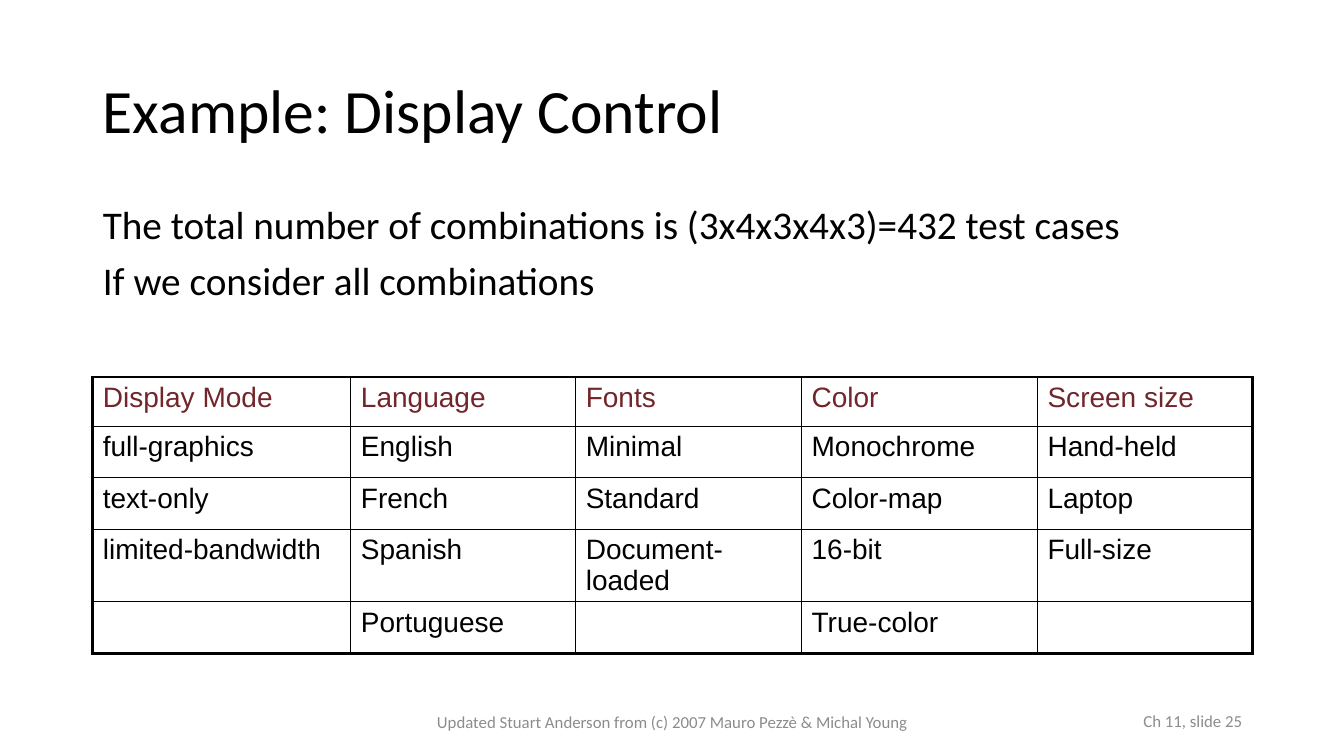
from lxml.etree import SubElement
from pptx import Presentation
from pptx.dml.color import RGBColor
from pptx.enum.text import MSO_ANCHOR as Anchor, MSO_AUTO_SIZE as AutoSize, PP_ALIGN as Align
from pptx.oxml.ns import qn
from pptx.util import Inches, Pt

COLORS = {"ink": "000000", "heading": "72252B", "footer": "8C8C8C", "paper": "FFFFFF"}
COLUMN_WIDTHS = [2.56, 2.23, 2.24, 2.34, 2.13]
ROW_HEIGHTS = [0.49, 0.51, 0.51, 0.55, 0.51]
DISPLAY_OPTIONS = [
    ["Display Mode", "Language", "Fonts", "Color", "Screen size"],
    ["full-graphics", "English", "Minimal", "Monochrome", "Hand-held"],
    ["text-only", "French", "Standard", "Color-map", "Laptop"],
    ["limited-bandwidth", "Spanish", "Document-loaded", "16-bit", "Full-size"],
    ["", "Portuguese", "", "True-color", ""],
]


def place(shape, left, top, width, height):
    shape.left, shape.top = Inches(left), Inches(top)
    shape.width, shape.height = Inches(width), Inches(height)


def style(paragraph, size, color, font="Calibri", align=Align.LEFT):
    paragraph.alignment = align
    paragraph.font.size = Pt(size)
    paragraph.font.name = font
    paragraph.font.color.rgb = RGBColor.from_string(COLORS[color])


def fill_title(title, text):
    place(title, 0.92, 0.4, 11.5, 1.45)
    frame = title.text_frame
    frame.text = text
    frame.auto_size = AutoSize.NONE
    frame.vertical_anchor = Anchor.MIDDLE
    style(frame.paragraphs[0], 44, "ink")
    frame.paragraphs[0].line_spacing = 0.9


def fill_body(body, lines):
    place(body, 0.92, 1.99, 10.33, 1.33)
    frame = body.text_frame
    frame.text = "\n".join(lines)
    frame.auto_size = AutoSize.NONE
    for paragraph in frame.paragraphs:
        style(paragraph, 28, "ink")
        paragraph.line_spacing = 0.9
        paragraph.space_before = Pt(10)
        properties = paragraph.line_spacing and paragraph._p.get_or_add_pPr()
        properties.set("marL", str(Inches(0.25)))
        properties.set("indent", str(-Inches(0.25)))
        bullet = SubElement(properties, qn("a:buNone"))
        properties.find(qn("a:defRPr")).addprevious(bullet)


def add_borders(cell, outer_sides):
    properties = cell._tc.get_or_add_tcPr()
    for side in "LRTB":
        width = Pt(2.25 if side in outer_sides else 1)
        line = SubElement(properties, qn(f"a:ln{side}"), w=str(width))
        fill = SubElement(line, qn("a:solidFill"))
        SubElement(fill, qn("a:srgbClr"), val=COLORS["ink"])


def add_options_table(slide, rows):
    last_row, last_column = len(rows) - 1, len(rows[0]) - 1
    table = slide.shapes.add_table(
        len(rows), len(rows[0]), Inches(0.92), Inches(3.74), Inches(11.5), Inches(2.8)
    ).table
    table.first_row = table.horz_banding = False
    for column, width in zip(table.columns, COLUMN_WIDTHS):
        column.width = Inches(width)
    for row, height in zip(table.rows, ROW_HEIGHTS):
        row.height = Inches(height)
    for r, options in enumerate(rows):
        for c, option in enumerate(options):
            cell = table.cell(r, c)
            cell.text = option
            style(cell.text_frame.paragraphs[0], 20, "ink" if r else "heading", "Arial")
            edges = {"L": c == 0, "R": c == last_column, "T": r == 0, "B": r == last_row}
            add_borders(cell, [side for side, outer in edges.items() if outer])
            cell.fill.solid()
            cell.fill.fore_color.rgb = RGBColor.from_string(COLORS["paper"])


def add_footer(slide, text, left, top, width, align):
    footer = slide.shapes.add_textbox(Inches(left), Inches(top), Inches(width), Inches(0.4))
    frame = footer.text_frame
    frame.text = text
    frame.word_wrap = True
    frame.vertical_anchor = Anchor.MIDDLE
    style(frame.paragraphs[0], 12, "footer", align=align)


def main():
    deck = Presentation()
    deck.slide_width, deck.slide_height = Inches(13.33), Inches(7.5)
    slide = deck.slides.add_slide(deck.slide_layouts[1])
    fill_title(slide.shapes.title, "Example: Display Control")
    fill_body(slide.placeholders[1], [
        "The total number of combinations is (3x4x3x4x3)=432 test cases",
        "If we consider all combinations",
    ])
    add_options_table(slide, DISPLAY_OPTIONS)
    add_footer(slide, "Updated Stuart Anderson from (c) 2007 Mauro Pezzè & Michal Young",
               4.17, 6.96, 5, Align.CENTER)
    add_footer(slide, "Ch 11, slide 25", 9.42, 6.95, 3, Align.RIGHT)
    deck.save("out.pptx")


if __name__ == "__main__":
    main()
